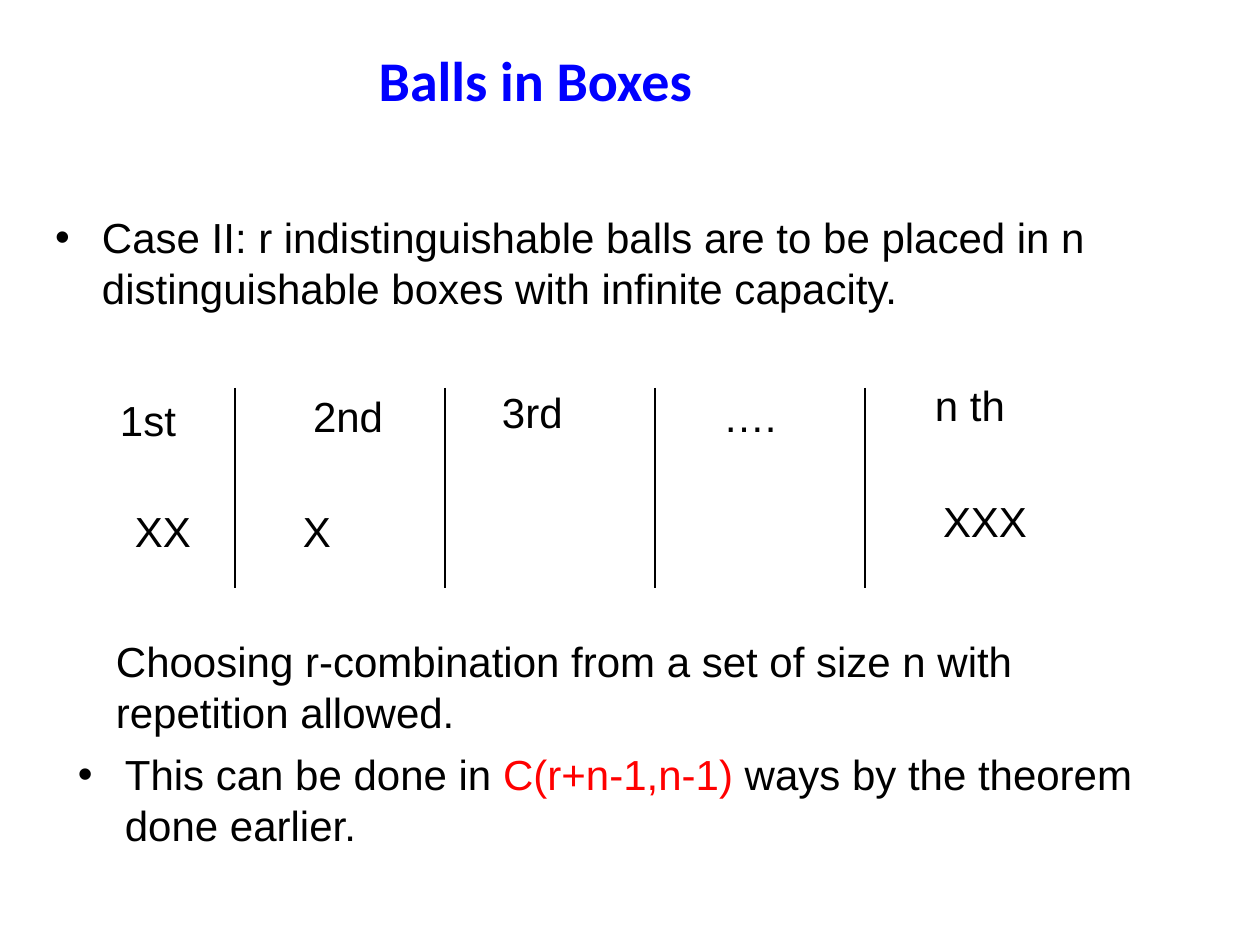
import pptx
import pptx.util
import pptx.dml.color
import pptx.enum.shapes
import pptx.enum.text
import lxml.etree

SCALE = 914400 / 126
INK = "000000"
BLUE = "0000FF"
RED = "FF0000"
ANCHOR = pptx.enum.text.MSO_ANCHOR
ALIGN = pptx.enum.text.PP_ALIGN
FIT = pptx.enum.text.MSO_AUTO_SIZE


def px(num):
    return pptx.util.Emu(round(num * SCALE))


def color(code):
    return pptx.dml.color.RGBColor.from_string(code)


def place(shape, box):
    shape.left, shape.top, shape.width, shape.height = map(px, box)


def style(run, size=24, face="Arial", code=INK, bold=False):
    run.font.size = pptx.util.Pt(size)
    run.font.name = face
    run.font.bold = bold
    run.font.color.rgb = color(code)


def bullet(para):
    props = para._p.get_or_add_pPr()
    props.set("marL", str(px(47)))
    props.set("indent", str(px(-47)))
    tint = lxml.etree.SubElement(props, pptx.oxml.ns.qn("a:buClr"))
    lxml.etree.SubElement(tint, pptx.oxml.ns.qn("a:srgbClr"), val=INK)
    lxml.etree.SubElement(props, pptx.oxml.ns.qn("a:buFont"), typeface="Arial")
    lxml.etree.SubElement(props, pptx.oxml.ns.qn("a:buChar"), char="•")


def label(shapes, box, text, wrap=False):
    shape = shapes.add_textbox(*map(px, box))
    frame = shape.text_frame
    frame.word_wrap = wrap
    frame.auto_size = FIT.SHAPE_TO_FIT_TEXT
    frame.margin_left = frame.margin_right = px(25)
    frame.margin_top = frame.margin_bottom = px(6)
    frame.text = text
    style(frame.paragraphs[0].runs[0])
    return frame.paragraphs[0]


def title(slide, box):
    shape = slide.shapes.title
    place(shape, box)
    frame = shape.text_frame
    frame.text = "Balls in Boxes"
    frame.vertical_anchor = ANCHOR.MIDDLE
    para = frame.paragraphs[0]
    para.alignment = ALIGN.CENTER
    style(para.runs[0], 32, "Calibri", BLUE, True)


def body(slide, box):
    shape = slide.placeholders[1]
    place(shape, box)
    frame = shape.text_frame
    frame.text = (
        "Case II: r indistinguishable balls are to be placed in n "
        "distinguishable boxes with infinite capacity."
    )
    frame.auto_size = FIT.NONE
    frame.vertical_anchor = ANCHOR.TOP
    frame.margin_left = frame.margin_right = px(13)
    frame.margin_top = px(65)
    para = frame.paragraphs[0]
    para.space_before = pptx.util.Pt(0)
    bullet(para)
    style(para.runs[0])


def boxes(slide, box):
    left, top, width, height = box
    group = slide.shapes.add_group_shape()
    marks = [
        ("1st", 0, 15, 106), ("2nd", 193, 11, 121),
        ("3rd", 382, 8, 111), ("….", 603, 11, 120),
        ("n th", 815, 0, 124), ("XX", 15, 126, 106),
        ("X", 183, 126, 78), ("XXX", 823, 116, 135),
    ]
    for text, x, y, wide in marks:
        label(group.shapes, (left + x, top + y, wide, 58), text)
    for step in range(4):
        x = px(left + 140 + 210 * step)
        line = group.shapes.add_connector(
            pptx.enum.shapes.MSO_CONNECTOR.STRAIGHT,
            x, px(top + 15), x, px(top + height))
        line.line.color.rgb = color(INK)
        line.line.width = pptx.util.Pt(0.75)
        lxml.etree.SubElement(
            line._element.spPr, pptx.oxml.ns.qn("a:effectLst"))


def result(slide, box):
    left, top, width, height = box
    label(
        slide.shapes, (left + 38, top, width - 38, 115),
        "Choosing r-combination from a set of size n with repetition allowed.",
        True)
    para = label(
        slide.shapes, (left, top + 113, width, height - 113),
        "This can be done in ", True)
    bullet(para)
    parts = [
        ("C(r+n-1,n-1)", RED),
        (" ways by the theorem done earlier.", INK),
    ]
    for text, code in parts:
        run = para.add_run()
        run.text = text
        style(run, code=code)


def main():
    deck = pptx.Presentation()
    deck.slide_width = px(1260)
    deck.slide_height = px(945)
    slide = deck.slides.add_slide(deck.slide_layouts[1])
    title(slide, (0, 0, 1071, 158))
    body(slide, (42, 147, 1176, 199))
    boxes(slide, (95, 373, 958, 215))
    result(slide, (53, 630, 1124, 278))
    deck.save("out.pptx")


if __name__ == "__main__":
    main()
